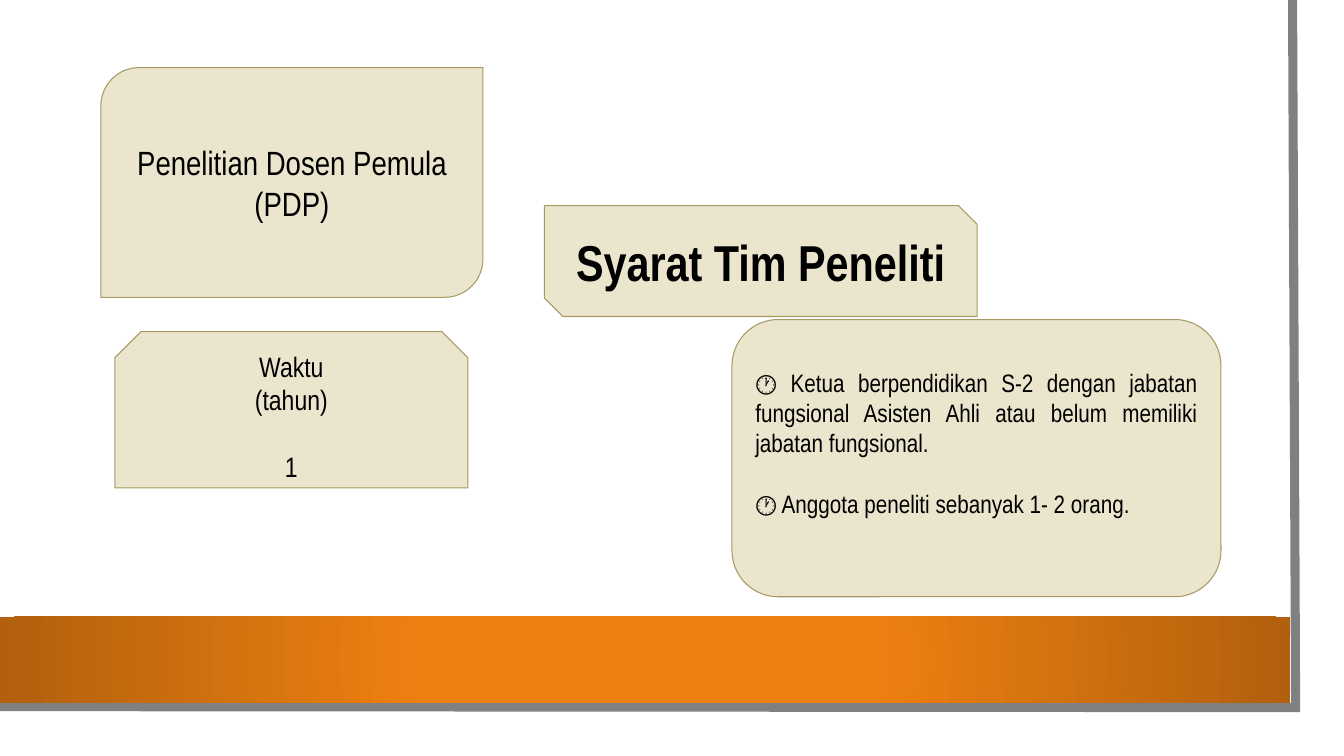
"""Build the slide on the research team requirements of the PDP scheme."""
from dataclasses import dataclass

import lxml.etree
import pptx
import pptx.dml.color
import pptx.enum.shapes
import pptx.enum.text
import pptx.oxml.ns
import pptx.shapes.autoshape
import pptx.slide
import pptx.util

Inches = pptx.util.Inches
Pt = pptx.util.Pt
Shape = pptx.enum.shapes.MSO_SHAPE
Align = pptx.enum.text.PP_ALIGN
qn = pptx.oxml.ns.qn


@dataclass(frozen=True)
class Line:
    text: str
    space_before: float = 0


@dataclass(frozen=True)
class Card:
    outline: Shape
    left: float
    top: float
    width: float
    height: float
    size: int
    lines: tuple[Line, ...]
    bold: bool = False
    align: Align = Align.CENTER
    bottom_margin: float = 0.05


CARDS = (
    Card(Shape.ROUND_2_DIAG_RECTANGLE, 1, 0.67, 3.79, 2.28, 24,
         (Line("Penelitian Dosen Pemula"), Line("(PDP)"))),
    Card(Shape.SNIP_2_DIAG_RECTANGLE, 5.4, 2.04, 4.29, 1.1, 36,
         (Line("Syarat Tim Peneliti"),), bold=True),
    Card(Shape.ROUNDED_RECTANGLE, 7.26, 3.17, 4.85, 2.75, 18,
         (Line("🕐 Ketua berpendidikan S-2 dengan jabatan fungsional "
               "Asisten Ahli atau belum memiliki jabatan fungsional."),
          Line("🕐 Anggota peneliti sebanyak 1- 2 orang.", 22)),
         align=Align.JUSTIFY, bottom_margin=0.35),
    Card(Shape.SNIP_2_SAME_RECTANGLE, 1.14, 3.29, 3.5, 1.55, 20,
         (Line("Waktu"), Line("(tahun)"), Line("1", 24))),
)


def color(value: str) -> pptx.dml.color.RGBColor:
    """Turn a hex string into a colour."""
    return pptx.dml.color.RGBColor.from_string(value)


def draw_frame(slide: pptx.slide.Slide) -> None:
    """Draw the grey rule along the right and bottom edges."""
    corners = [(Inches(x), Inches(y)) for x, y in ((12.82, 0), (12.85, 7.02), (-0.03, 7.01))]
    builder = slide.shapes.build_freeform(*corners[0])
    builder.add_line_segments(corners[1:], close=False)
    frame = builder.convert_to_shape()
    frame.shadow.inherit = False
    frame.fill.background()
    frame.line.color.rgb = color("808080")
    frame.line.width = Pt(6.5)
    lxml.etree.SubElement(frame.line._get_or_add_ln(), qn("a:miter"), lim="800000")


def draw_band(slide: pptx.slide.Slide) -> None:
    """Draw the orange band with its circular gradient."""
    band = slide.shapes.add_shape(
        Shape.RECTANGLE, Inches(0), Inches(6.12), Inches(12.8), Inches(0.85))
    band.shadow.inherit = False
    band.line.fill.background()
    band.fill.gradient()
    for stop, (position, shade) in zip(band.fill.gradient_stops,
                                       ((0.34, "EE8011"), (1, "B2600D"))):
        stop.position = position
        stop.color.rgb = color(shade)
    gradient = band._element.spPr.find(qn("a:gradFill"))
    gradient.remove(gradient.find(qn("a:lin")))
    circle = lxml.etree.SubElement(gradient, qn("a:path"), {"path": "circle"})
    lxml.etree.SubElement(circle, qn("a:fillToRect"), dict.fromkeys("ltrb", "50000"))


def draw_card(slide: pptx.slide.Slide, card: Card) -> None:
    """Draw one beige card with its text."""
    panel = slide.shapes.add_shape(
        card.outline, Inches(card.left), Inches(card.top),
        Inches(card.width), Inches(card.height))
    panel.shadow.inherit = False
    panel.fill.solid()
    panel.fill.fore_color.rgb = color("EBE5CD")
    panel.line.color.rgb = color("A59A61")
    panel.line.width = Pt(0.75)
    frame = panel.text_frame
    frame.word_wrap = True
    frame.vertical_anchor = pptx.enum.text.MSO_ANCHOR.MIDDLE
    frame.margin_bottom = Inches(card.bottom_margin)
    for index, line in enumerate(card.lines):
        paragraph = frame.add_paragraph() if index else frame.paragraphs[0]
        paragraph.alignment = card.align
        if line.space_before:
            paragraph.space_before = Pt(line.space_before)
        run = paragraph.add_run()
        run.text = line.text
        run.font.name = "Arial Narrow"
        run.font.size = Pt(card.size)
        run.font.bold = card.bold
        run.font.color.rgb = color("000000")


def main() -> None:
    """Build and save the presentation."""
    deck = pptx.Presentation()
    deck.slide_width = Inches(13.33)
    deck.slide_height = Inches(7.5)
    slide = deck.slides.add_slide(deck.slide_layouts[6])
    draw_frame(slide)
    draw_band(slide)
    for card in CARDS:
        draw_card(slide, card)
    deck.save("out.pptx")


if __name__ == "__main__":
    main()
